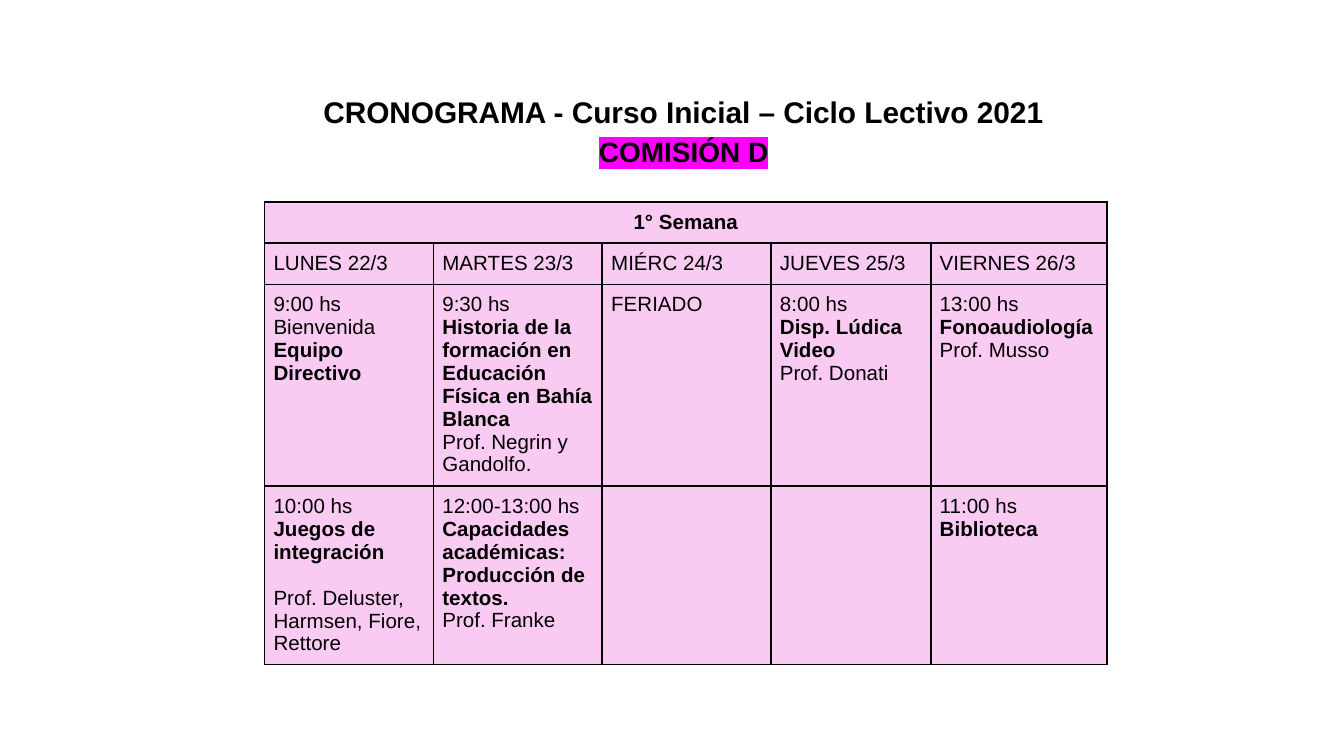
from lxml import etree
from pptx import Presentation
from pptx.dml.color import RGBColor
from pptx.enum.text import MSO_ANCHOR, MSO_AUTO_SIZE, PP_ALIGN
from pptx.oxml.ns import qn
from pptx.util import Cm, Pt

CENTER, LEFT = PP_ALIGN.CENTER, PP_ALIGN.LEFT
TOP = MSO_ANCHOR.TOP
NO_AUTOFIT = MSO_AUTO_SIZE.NONE
COLORS = {"text": "000000", "cell": "F9CBF2", "highlight": "FF00FF", "border": "000000"}
FONT = "Arial"
PLAIN, BOLD, SPACED = "plain", "bold", "spaced"  # spaced: plain, one line lower


def add_span(para, text, size, bold):
    span = para.add_run()
    span.text = text
    span.font.name = FONT
    span.font.size = Pt(size)
    span.font.bold = bold
    span.font.color.rgb = RGBColor.from_string(COLORS["text"])
    return span


def add_borders(cell):
    properties = cell._tc.get_or_add_tcPr()
    for index, side in enumerate(("lnL", "lnR", "lnT", "lnB")):
        line = etree.Element(qn(f"a:{side}"), w=str(Pt(1)))
        fill = etree.SubElement(line, qn("a:solidFill"))
        etree.SubElement(fill, qn("a:srgbClr"), val=COLORS["border"])
        properties.insert(index, line)


deck = Presentation()
deck.slide_width, deck.slide_height = Cm(25.4), Cm(14.28)
page = deck.slides.add_slide(deck.slide_layouts[5])

# Title with the highlighted group name
title = page.shapes.title
title.left, title.top, title.width, title.height = Cm(4.93), Cm(1.42), Cm(15.98), Cm(2.03)
box = title.text_frame
box.word_wrap = True
box.auto_size = NO_AUTOFIT
box.vertical_anchor = TOP
box.margin_left = box.margin_right = box.margin_top = box.margin_bottom = Cm(0.25)
heading, group = box.paragraphs[0], box.add_paragraph()
for para in (heading, group):
    para.alignment = CENTER
    para.line_spacing = 1.15
add_span(heading, "CRONOGRAMA - Curso Inicial – Ciclo Lectivo 2021", 16, True)
span = add_span(group, "COMISIÓN D", 15, True)
highlight = etree.Element(qn("a:highlight"))
etree.SubElement(highlight, qn("a:srgbClr"), val=COLORS["highlight"])
span.font._element.find(qn("a:solidFill")).addnext(highlight)

# Schedule: each cell is a list of (text, style) lines
days = ["LUNES 22/3", "MARTES 23/3", "MIÉRC 24/3", "JUEVES 25/3", "VIERNES 26/3"]
schedule = [
    [[("1° Semana", BOLD)], [], [], [], []],
    [[(day, PLAIN)] for day in days],
    [
        [("9:00 hs", PLAIN), ("Bienvenida", PLAIN), ("Equipo Directivo", BOLD)],
        [
            ("9:30 hs", PLAIN),
            ("Historia de la formación en Educación Física en Bahía Blanca", BOLD),
            ("Prof. Negrin y Gandolfo.", PLAIN),
        ],
        [("FERIADO", PLAIN)],
        [("8:00 hs", PLAIN), ("Disp. Lúdica", BOLD), ("Video", BOLD), ("Prof. Donati", PLAIN)],
        [("13:00 hs", PLAIN), ("Fonoaudiología", BOLD), ("Prof. Musso", PLAIN)],
    ],
    [
        [
            ("10:00 hs", PLAIN),
            ("Juegos de integración", BOLD),
            ("Prof. Deluster, Harmsen, Fiore,", SPACED),
            ("Rettore", PLAIN),
        ],
        [
            ("12:00-13:00 hs", PLAIN),
            ("Capacidades académicas: Producción de textos.", BOLD),
            ("Prof. Franke", PLAIN),
        ],
        [],
        [],
        [("11:00 hs", PLAIN), ("Biblioteca", BOLD)],
    ],
]
column_widths = [3.19, 3.19, 3.19, 3.02, 3.33]
row_heights = [0.78, 0.78, 3.81, 3.37]

frame = page.shapes.add_table(
    len(row_heights), len(column_widths),
    Cm(5), Cm(3.81), Cm(sum(column_widths)), Cm(sum(row_heights)),
)
table = frame.table
for column, width in zip(table.columns, column_widths):
    column.width = Cm(width)
for row, height in zip(table.rows, row_heights):
    row.height = Cm(height)
table.cell(0, 0).merge(table.cell(0, len(column_widths) - 1))

# Cell formatting and text
for row_index, entries in enumerate(schedule):
    for column_index, lines in enumerate(entries):
        cell = table.cell(row_index, column_index)
        cell.fill.solid()
        cell.fill.fore_color.rgb = RGBColor.from_string(COLORS["cell"])
        cell.margin_left = cell.margin_right = cell.margin_top = cell.margin_bottom = Cm(0.17)
        add_borders(cell)
        for line_index, (text, style) in enumerate(lines):
            box = cell.text_frame
            para = box.add_paragraph() if line_index else box.paragraphs[0]
            para.alignment = LEFT if row_index else CENTER
            if style == SPACED:
                para.space_before = Pt(12.3)
            add_span(para, text, 11, style == BOLD)

deck.save("out.pptx")
